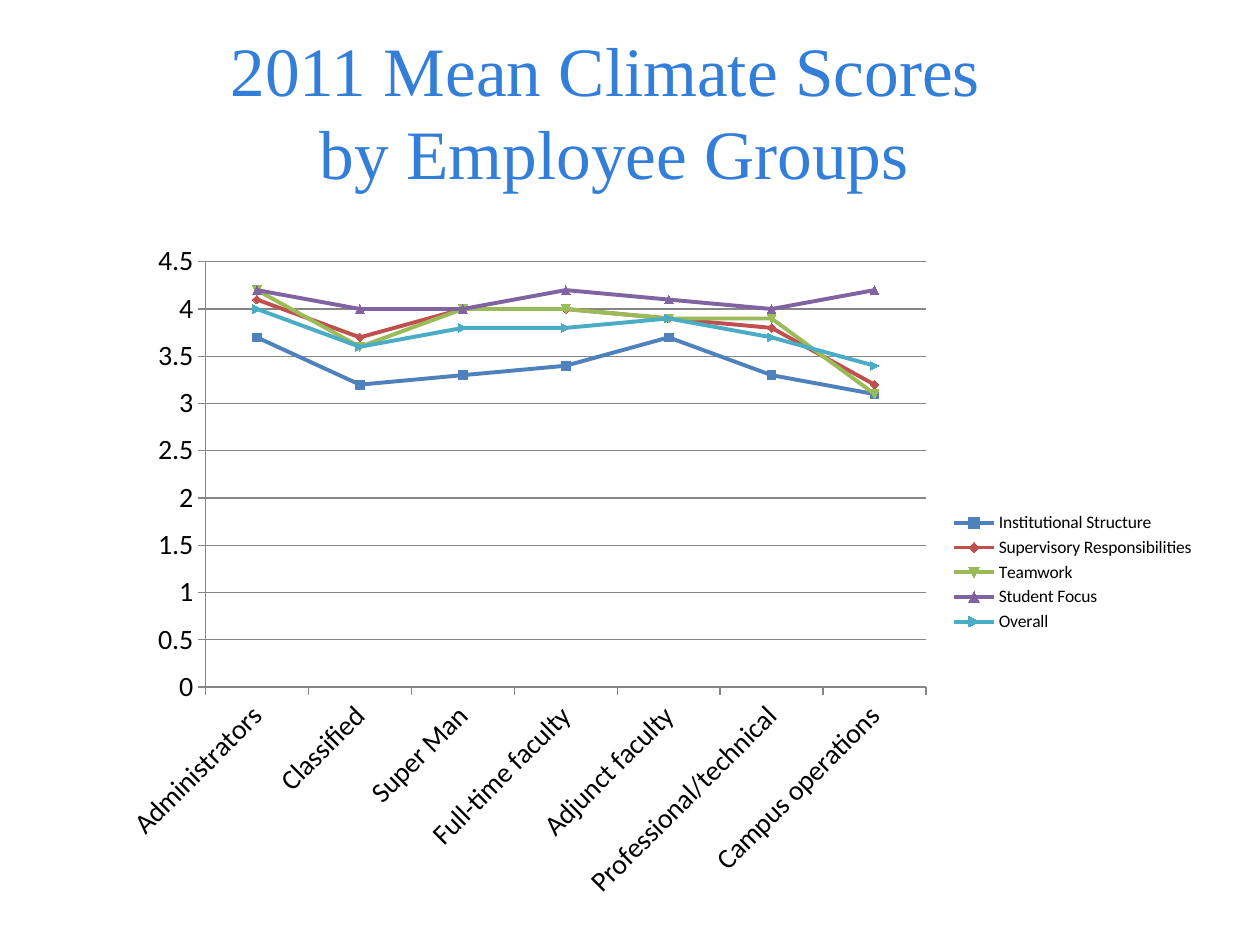
"""Build a slide with a line chart of mean climate scores by employee group."""
from dataclasses import dataclass

from lxml import etree
from pptx import Presentation
from pptx import util as u
from pptx.chart import data as chart_data
from pptx.dml import color
from pptx.enum import chart as chart_enum
from pptx.enum import text
from pptx.oxml import ns

AXIS_GRAY = "868686"
GROUPS = ["Administrators", "Classified", "Super Man", "Full-time faculty",
          "Adjunct faculty", "Professional/technical", "Campus operations"]


@dataclass(frozen=True)
class Box:
    left: float
    top: float
    width: float
    height: float

    def lengths(self) -> list[u.Pt]:
        """Return the four lengths in points."""
        return [u.Pt(value) for value in (self.left, self.top, self.width, self.height)]


@dataclass(frozen=True)
class ScoreLine:
    name: str
    color: str
    scores: tuple[float, ...]


TITLE_BOX = Box(36, 24, 630, 78)
CHART_BOX = Box(60, 132, 630, 390)
PLOT_BOX = Box(57.4, 17.6, 411.8, 243.1)
SCORE_LINES = [
    ScoreLine("Institutional Structure", "4F81BD", (3.7, 3.2, 3.3, 3.4, 3.7, 3.3, 3.1)),
    ScoreLine("Supervisory Responsibilities", "C0504D", (4.1, 3.7, 4, 4, 3.9, 3.8, 3.2)),
    ScoreLine("Teamwork", "9BBB59", (4.2, 3.6, 4, 4, 3.9, 3.9, 3.1)),
    ScoreLine("Student Focus", "8064A2", (4.2, 4, 4, 4.2, 4.1, 4, 4.2)),
    ScoreLine("Overall", "4BACC6", (4, 3.6, 3.8, 3.8, 3.9, 3.7, 3.4)),
]


def paint(target, hex_color: str) -> None:
    """Give a font, line or fill colour a value."""
    target.rgb = color.RGBColor.from_string(hex_color)


def style_font(font, *, name: str, size: float, hex_color: str) -> None:
    """Set the face, size and colour of a font."""
    font.name, font.size = name, u.Pt(size)
    paint(font.color, hex_color)


def add_text(slide, content: str, box: Box, **font_format) -> None:
    """Add a centred text box with one paragraph."""
    frame = slide.shapes.add_textbox(*box.lengths()).text_frame
    frame.word_wrap = True
    frame.vertical_anchor = text.MSO_ANCHOR.MIDDLE
    paragraph = frame.paragraphs[0]
    paragraph.text = content
    paragraph.alignment = text.PP_ALIGN.CENTER
    for run in paragraph.runs:
        style_font(run.font, **font_format)


def style_line(line, hex_color: str, width: float) -> None:
    """Set the colour and width of a line."""
    paint(line.color, hex_color)
    line.width = u.Pt(width)


def style_axis(axis) -> None:
    """Set the labels, ticks and line of an axis."""
    style_font(axis.tick_labels.font, name="Calibri", size=16, hex_color="000000")
    axis.major_tick_mark = chart_enum.XL_TICK_MARK.OUTSIDE
    axis.minor_tick_mark = chart_enum.XL_TICK_MARK.NONE
    style_line(axis.format.line, AXIS_GRAY, 0.75)


def place_plot(chart, plot: Box, frame: Box) -> None:
    """Place the inner plot area within the chart frame."""
    plot_area = chart.plots[0]._element.getparent()
    for old_layout in plot_area.findall(ns.qn("c:layout")):
        plot_area.remove(old_layout)
    layout = etree.Element(ns.qn("c:layout"))
    manual = etree.SubElement(layout, ns.qn("c:manualLayout"))
    settings = {"layoutTarget": "inner", "xMode": "edge", "yMode": "edge",
                "x": plot.left / frame.width, "y": plot.top / frame.height,
                "w": plot.width / frame.width, "h": plot.height / frame.height}
    for tag, value in settings.items():
        etree.SubElement(manual, ns.qn(f"c:{tag}")).set("val", str(value))
    plot_area.insert(0, layout)


def add_score_chart(slide, lines: list[ScoreLine]) -> None:
    """Add the line chart with its axes and legend."""
    scores = chart_data.CategoryChartData()
    scores.categories = GROUPS
    for line in lines:
        scores.add_series(line.name, line.scores)
    chart = slide.shapes.add_chart(
        chart_enum.XL_CHART_TYPE.LINE_MARKERS, *CHART_BOX.lengths(), scores).chart
    chart.has_title = False
    style_font(chart.font, name="Calibri", size=10, hex_color="000000")
    chart.has_legend = True
    chart.legend.position = chart_enum.XL_LEGEND_POSITION.RIGHT
    chart.legend.include_in_layout = False
    chart.plots[0].vary_by_categories = False
    for series, line in zip(chart.plots[0].series, lines):
        series.smooth = False
        style_line(series.format.line, line.color, 2.25)
        series.marker.size = 5
        series.marker.format.fill.solid()
        paint(series.marker.format.fill.fore_color, line.color)
        style_line(series.marker.format.line, line.color, 0.75)
    for axis in (chart.category_axis, chart.value_axis):
        style_axis(axis)
    label_body = chart.category_axis._element.find(
        f"{ns.qn('c:txPr')}/{ns.qn('a:bodyPr')}")
    label_body.set("rot", str(-45 * 60000))
    label_body.set("vert", "horz")
    value_axis = chart.value_axis
    value_axis.minimum_scale, value_axis.maximum_scale = 0, 4.5
    value_axis.major_unit = 0.5
    value_axis.has_major_gridlines = True
    style_line(value_axis.major_gridlines.format.line, AXIS_GRAY, 0.75)
    place_plot(chart, PLOT_BOX, CHART_BOX)


def main() -> None:
    """Build and save the slide."""
    presentation = Presentation()
    presentation.slide_width, presentation.slide_height = u.Pt(720), u.Pt(540)
    slide = presentation.slides.add_slide(presentation.slide_layouts[6])
    add_text(slide, "2011 Mean Climate Scores \vby Employee Groups", TITLE_BOX,
             name="Times New Roman", size=39.6, hex_color="337ED9")
    add_score_chart(slide, SCORE_LINES)
    presentation.save("out.pptx")


if __name__ == "__main__":
    main()
